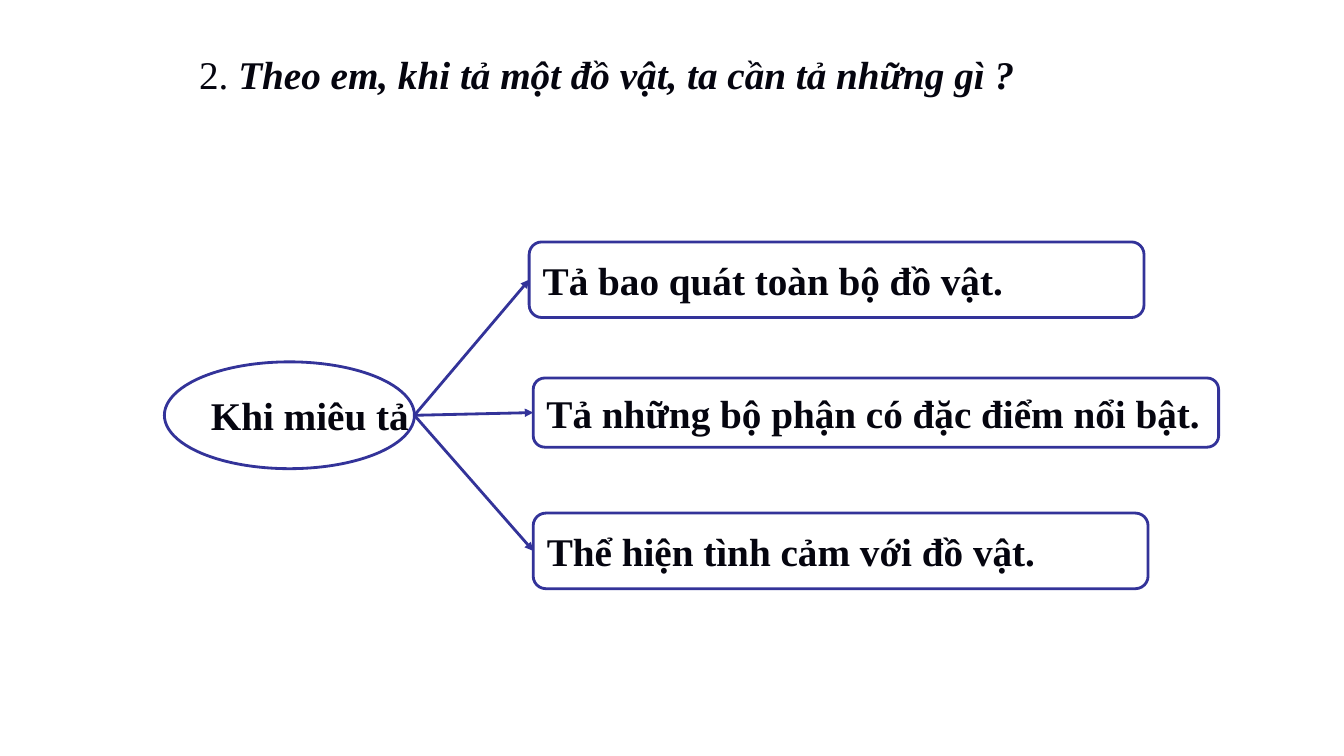
from lxml import etree
from pptx import Presentation
from pptx.dml.color import RGBColor
from pptx.enum.shapes import MSO_CONNECTOR, MSO_SHAPE
from pptx.enum.text import MSO_ANCHOR, PP_ALIGN
from pptx.oxml.ns import qn
from pptx.util import Pt

ROUNDED = MSO_SHAPE.FLOWCHART_ALTERNATE_PROCESS
OVAL = MSO_SHAPE.OVAL
STRAIGHT = MSO_CONNECTOR.STRAIGHT
MIDDLE = MSO_ANCHOR.MIDDLE
LEFT = PP_ALIGN.LEFT
LEFT_SIDE = 1

COLORS = {"paper": "FFFFFF", "outline": "333399", "ink": "05050F"}
COLORS = {name: RGBColor.from_string(value) for name, value in COLORS.items()}
LINE_WIDTH = Pt(2)
PLAIN = {"name": "Times New Roman", "size": Pt(28), "bold": False, "italic": False}
BOLD = {**PLAIN, "bold": True}
BOLD_ITALIC = {**BOLD, "italic": True}

deck = Presentation()
deck.slide_width, deck.slide_height = Pt(960), Pt(540)
page = deck.slides.add_slide(deck.slide_layouts[6])


def add_box(kind, place, outline, spans):
    box = page.shapes.add_shape(kind, *[Pt(length) for length in place])
    box.shadow.inherit = False
    box.fill.solid()
    box.fill.fore_color.rgb = COLORS["paper"]
    box.line.color.rgb = COLORS[outline]
    box.line.width = LINE_WIDTH
    frame = box.text_frame
    frame.word_wrap = False
    frame.vertical_anchor = MIDDLE
    para = frame.paragraphs[0]
    para.alignment = LEFT
    for text, style in spans:
        span = para.add_run()
        span.text = text
        span.font.color.rgb = COLORS["ink"]
        for attribute, value in style.items():
            setattr(span.font, attribute, value)
    return box


# Question
add_box(ROUNDED, (126, 30.2, 672, 44.6), "paper", [
    (" 2. ", PLAIN),
    ("Theo em, khi tả một đồ vật, ta cần tả những gì ?", BOLD_ITALIC),
])

# Topic
topic = add_box(OVAL, (117.4, 258.5, 178.6, 76.3), "outline", [("Khi miêu tả", BOLD)])
topic_right = topic.left + topic.width
topic_middle = topic.top + topic.height // 2

# Answers, each with an arrow from the topic
answers = [
    ("Tả bao quát toàn bộ đồ vật.", (378, 172.8, 439.2, 54)),
    ("Tả những bộ phận có đặc điểm nổi bật.", (380.9, 270, 489.6, 49.4)),
    ("Thể hiện tình cảm với đồ vật.", (380.9, 366.5, 439.2, 54)),
]
for text, place in answers:
    answer = add_box(ROUNDED, place, "outline", [(text, BOLD)])
    arrow = page.shapes.add_connector(
        STRAIGHT, topic_right, topic_middle, answer.left, answer.top)
    arrow.end_connect(answer, LEFT_SIDE)
    arrow.line.color.rgb = COLORS["outline"]
    arrow.line.width = LINE_WIDTH
    etree.SubElement(arrow.line._get_or_add_ln(), qn("a:tailEnd"), type="triangle")
    etree.SubElement(arrow._element.spPr, qn("a:effectLst"))

deck.save("out.pptx")
